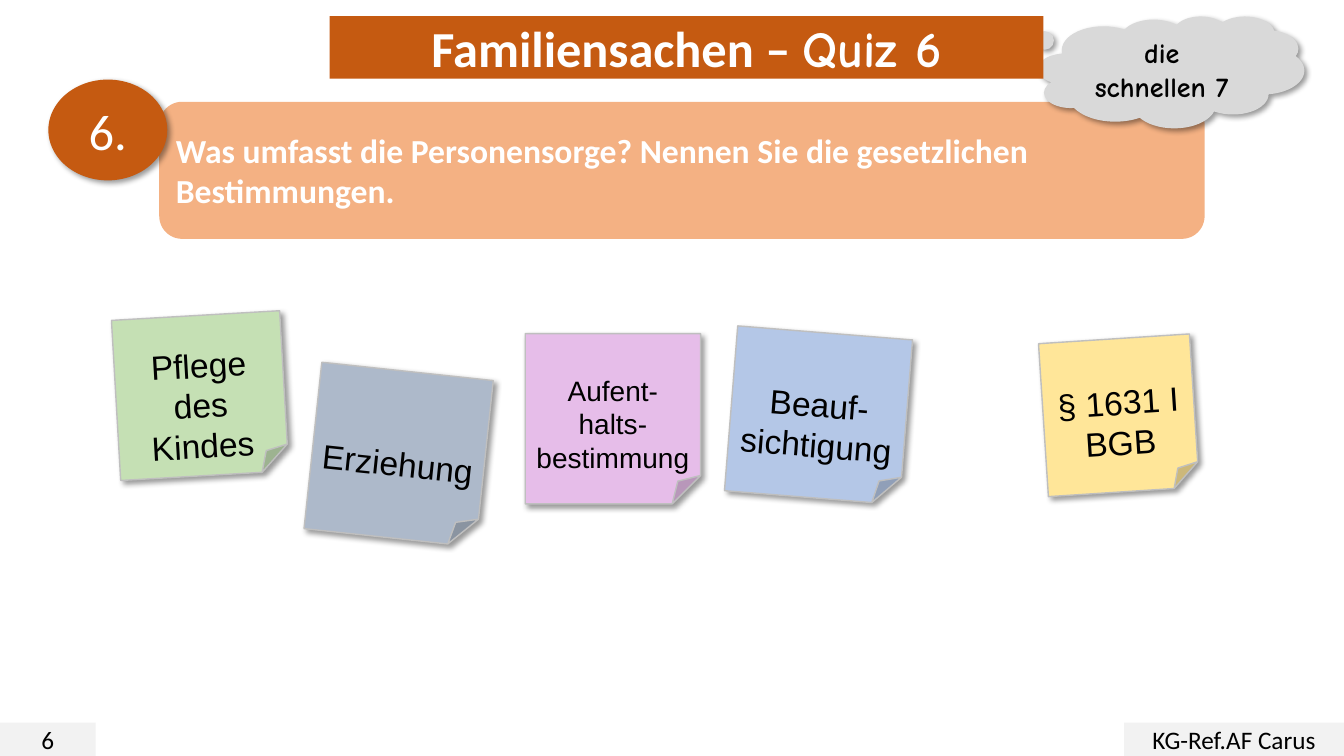
"""Build the quiz slide on family law with its question and sticky-note answers."""
from lxml.etree import SubElement
from pptx import Presentation
from pptx.dml.color import RGBColor
from pptx.enum.shapes import MSO_SHAPE
from pptx.enum.text import MSO_ANCHOR, MSO_AUTO_SIZE, PP_ALIGN
from pptx.oxml.ns import qn
from pptx.util import Inches, Pt

WIDTH, HEIGHT = Inches(13.33), Inches(7.5)
BLACK, WHITE, RUST, EDGE = "000000", "FFFFFF", "C55A11", "BFBFBF"

TITLE = [("Familiensachen – ", "Calibri"), ("Quiz 6", "Comic Neue")]
TITLE_AREA = (24.53, 2.13, 53.1, 8.27)
FOOTERS = [
    ("6", (0, 95.6, 7.12, 4.4)),
    ("KG-Ref.AF Carus", (83.63, 95.6, 16.37, 4.4)),
]
QUESTION = "Was umfasst die Personensorge? Nennen Sie die gesetzlichen Bestimmungen."
QUESTION_AREA = (11.85, 13.47, 77.78, 18.13)
BADGE_AREA = (3.6, 10.53, 8.85, 13.33)
CLOUD_AREA = (77.25, 2.13, 19.8, 14.8)
NOTES = [
    ("Pflege des Kindes", (8.63, 41.73, 12.53, 21.2), -3.3, "C5E0B4", 24, 0.5),
    ("Aufent-halts-bestimmung", (39.08, 44.13, 13.05, 22.53), 0, "E6BDE9", 20, 0.43),
    ("Beauf-sichtigung", (54.38, 44, 13.05, 21.87), 4.6, "B4C7E7", 24, 0.5),
    ("Erziehung", (23.25, 49.07, 12.83, 22.13), 6.1, "ADB9CA", 24, 0.5),
    ("§ 1631 I\nBGB", (77.63, 44.8, 11.25, 20.27), -3.7, "FFE699", 24, 0.43),
]


def color(code):
    return RGBColor.from_string(code)


def place(area):
    """Turn percentages of the slide into left, top, width and height."""
    return [int(share * side / 100) for share, side in zip(area, (WIDTH, HEIGHT) * 2)]


def paint(shape, fill):
    shape.fill.solid()
    shape.fill.fore_color.rgb = color(fill)


def style(para, size, font, ink, bold=False, align=PP_ALIGN.CENTER):
    para.alignment = align
    para.font.size, para.font.name, para.font.bold = Pt(size), font, bold
    para.font.color.rgb = color(ink)


def add_box(page, kind, area, fill, text, size, font="Calibri", ink=BLACK,
            bold=False, align=PP_ALIGN.CENTER):
    box = page.shapes.add_shape(kind, *place(area))
    paint(box, fill)
    box.line.fill.background()
    box.shadow.inherit = False
    frame = box.text_frame
    frame.word_wrap = True
    frame.vertical_anchor = MSO_ANCHOR.MIDDLE
    frame.text = text
    for para in frame.paragraphs:
        style(para, size, font, ink, bold, align)
    return box


def cast_shadow(box):
    effects = box._element.spPr.find(qn("a:effectLst"))
    shadow = SubElement(effects, qn("a:outerShdw"), blurRad=str(Pt(4)), dist=str(Pt(3)),
                        dir="2700000", algn="tl", rotWithShape="0")
    tint = SubElement(shadow, qn("a:srgbClr"), val=BLACK)
    SubElement(tint, qn("a:alpha"), val="40000")


def add_note(page, text, area, angle, fill, size, inset):
    note = add_box(page, MSO_SHAPE.FOLDED_CORNER, area, fill, text, size, "Arial")
    note.rotation = angle
    note.line.color.rgb = color(EDGE)
    note.line.width = Pt(1)
    note.text_frame.margin_top = Inches(inset)
    cast_shadow(note)


def fill_title(page):
    title = page.shapes.title
    title.left, title.top, title.width, title.height = place(TITLE_AREA)
    outline = SubElement(title._element.spPr, qn("a:prstGeom"), prst="roundRect")
    SubElement(outline, qn("a:avLst"))
    paint(title, RUST)
    frame = title.text_frame
    frame.auto_size = MSO_AUTO_SIZE.NONE
    frame.vertical_anchor = MSO_ANCHOR.MIDDLE
    para = frame.paragraphs[0]
    style(para, 36, "Calibri", WHITE, bold=True)
    for words, font in TITLE:
        span = para.add_run()
        span.text, span.font.name = words, font
    page.shapes._spTree.append(title._element)


def main():
    deck = Presentation()
    deck.slide_width, deck.slide_height = WIDTH, HEIGHT
    page = deck.slides.add_slide(deck.slide_layouts[5])
    for text, area in FOOTERS:
        add_box(page, MSO_SHAPE.RECTANGLE, area, "F2F2F2", text, 18)
    add_box(page, MSO_SHAPE.ROUNDED_RECTANGLE, QUESTION_AREA, "F4B183", QUESTION, 24,
            ink=WHITE, bold=True, align=PP_ALIGN.LEFT)
    cast_shadow(add_box(page, MSO_SHAPE.OVAL, BADGE_AREA, RUST, "6.", 36, ink=WHITE))
    cloud = add_box(page, MSO_SHAPE.CLOUD_CALLOUT, CLOUD_AREA, "D9D9D9",
                    "die schnellen 7", 20, "Comic Neue", bold=True)
    cloud.adjustments[0], cloud.adjustments[1] = -0.59, -0.35
    cast_shadow(cloud)
    for note in NOTES:
        add_note(page, *note)
    fill_title(page)
    deck.save("out.pptx")


if __name__ == "__main__":
    main()
